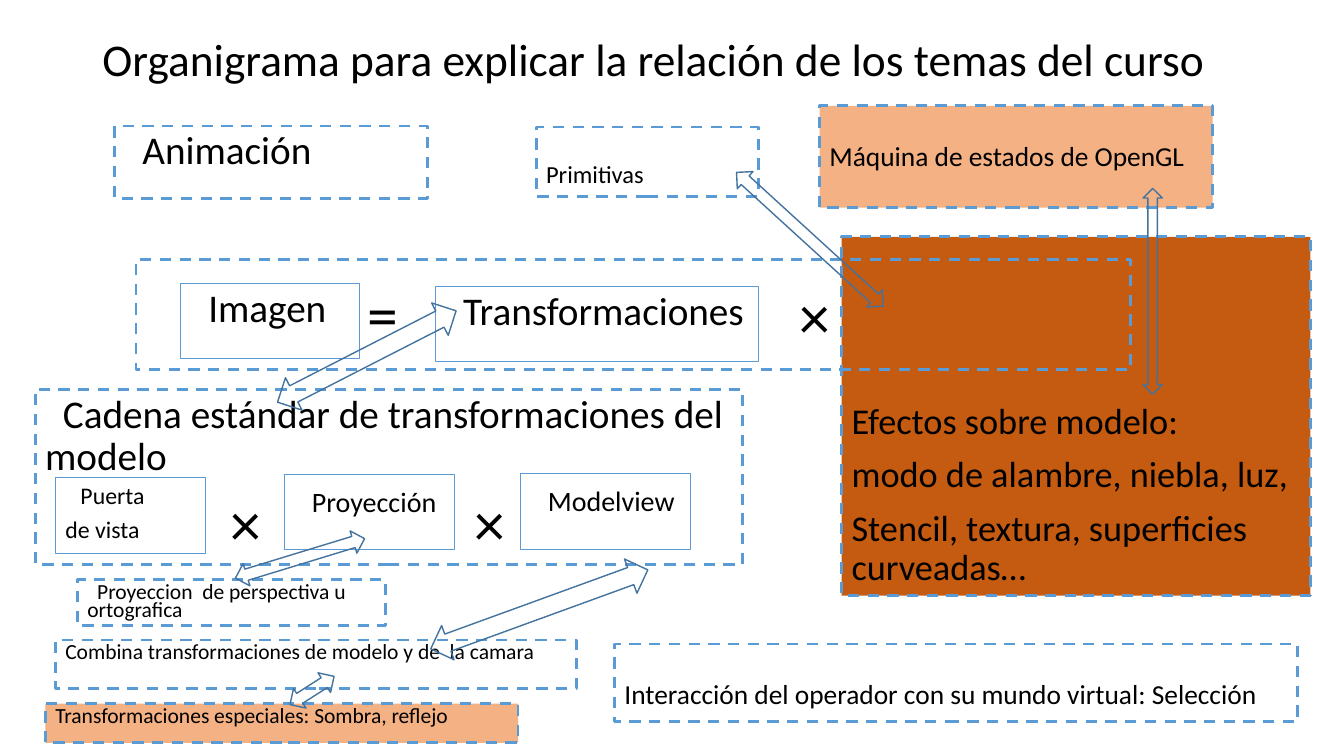
"""Build the course topic map with its boxes, operators and double arrows."""
from pptx import Presentation
from pptx.dml.color import RGBColor
from pptx.enum import dml, shapes, text
from pptx.util import Pt

COLORS = {"ink": "000000", "blue": "5B9BD5", "arrow": "43739E", "peach": "F4B183", "rust": "C55A11"}


def write(shape, lines, size, spacing=0.9, indent=0, top=3.6):
    """Fill a shape with left-aligned paragraphs."""
    frame = shape.text_frame
    frame.word_wrap = True
    frame.auto_size = text.MSO_AUTO_SIZE.NONE
    frame.vertical_anchor = text.MSO_ANCHOR.TOP
    frame.margin_top, frame.margin_bottom = Pt(top), 0
    frame.text = "\n".join(lines)
    for number, paragraph in enumerate(frame.paragraphs):
        paragraph.alignment = text.PP_ALIGN.LEFT
        paragraph.line_spacing = spacing
        paragraph.space_before = Pt(10 if number else 0)
        paragraph.font.size = Pt(size)
        paragraph.font.name = "Calibri"
        paragraph.font.color.rgb = RGBColor.from_string(COLORS["ink"])
        if indent and number == 0:
            paragraph._p.get_or_add_pPr().set("indent", str(Pt(indent)))


def draw(kind, place, line, width, fill=None):
    """Add an outlined shape, filled only when a colour is named."""
    shape = slide.shapes.add_shape(kind, *[Pt(value) for value in place])
    shape.shadow.inherit = False
    shape.line.color.rgb = RGBColor.from_string(COLORS[line])
    shape.line.width = Pt(width)
    if fill:
        shape.fill.solid()
        shape.fill.fore_color.rgb = RGBColor.from_string(COLORS[fill])
    else:
        shape.fill.background()
    return shape


presentation = Presentation()
presentation.slide_width, presentation.slide_height = Pt(960), Pt(540)
slide = presentation.slides.add_slide(presentation.slide_layouts[5])

title = slide.shapes.title
title.left, title.top, title.width, title.height = Pt(66), Pt(7.2), Pt(828), Pt(74)
write(title, ["Organigrama para explicar la relación de los temas del curso"], 32.4)
title.text_frame.vertical_anchor = text.MSO_ANCHOR.MIDDLE
title.text_frame.margin_bottom = Pt(3.6)

solid_boxes = [
    ((311, 204.5, 231, 54), ["Transformaciones"], dict(size=28, indent=12.7)),
    ((129, 202.3, 127.5, 54), ["Imagen"], dict(size=28, indent=12.7)),
    ((39.6, 341.3, 107.3, 54), ["Puerta", "de vista"], dict(size=17, spacing=0.7, indent=10.8, top=7.6)),
    ((203, 338.6, 121.7, 54), ["Proyección"], dict(size=20, indent=12.7, top=10.2)),
    ((371.5, 338.2, 121.7, 54), ["Modelview"], dict(size=20, indent=12.7, top=10.2)),
]
dashed_boxes = [
    ((82, 90, 223.2, 51.8), None, ["Animación"], dict(size=28, indent=12.7)),
    ((25.2, 278, 505.4, 125.3), None, ["Cadena estándar de transformaciones del modelo"],
     dict(size=28, indent=12.7)),
    ((601.2, 169.2, 334.8, 256.3), "rust",
     ["Efectos sobre modelo:", "modo de alambre, niebla, luz,", "Stencil, textura, superficies curveadas…"],
     dict(size=25.9, top=119)),
    ((439, 460, 488, 55.4), None, ["Interacción del operador con su mundo virtual: Selección"],
     dict(size=19.6, spacing=0.7, top=30.3)),
    ((39.6, 457.2, 372.2, 34.6), None, ["Combina transformaciones de modelo y de  la camara"],
     dict(size=15.4, spacing=0.7)),
    ((55.4, 414, 220.3, 33), None, ["Proyeccion  de perspectiva u ortografica"],
     dict(size=15.4, spacing=0.7, indent=7)),
    ((383, 90.7, 158.6, 49.7), None, ["Primitivas"], dict(size=17.5, spacing=0.7, top=28.5)),
    ((585.4, 75.6, 280.8, 72.7), "peach", ["Máquina de estados de OpenGL"],
     dict(size=19.6, spacing=0.7, top=30.3)),
    ((32.4, 502.6, 337.7, 28), "peach", ["Transformaciones especiales: Sombra, reflejo"],
     dict(size=15.4, spacing=0.7)),
    ((97.2, 185.5, 710.6, 78.5), None, [], dict(size=18)),
]
for place, lines, style in solid_boxes:
    write(draw(shapes.MSO_SHAPE.RECTANGLE, place, "blue", 0.75), lines, **style)
for place, fill, lines, style in dashed_boxes:
    box = draw(shapes.MSO_SHAPE.RECTANGLE, place, "blue", 2, fill)
    box.line.dash_style = dml.MSO_LINE.DASH
    if lines:
        write(box, lines, **style)

for symbol, left, top in [("×", 563.8, 201), ("=", 255.6, 199.4), ("×", 332, 348.5), ("×", 157.7, 348.5)]:
    operator = slide.shapes.add_textbox(Pt(left), Pt(top), Pt(38), Pt(59))
    write(operator, [symbol], 44)

arrows = [
    ((249, 183, 26, 143.3), 62.9, 0.265),
    ((372.2, 352.8, 26, 165), 70, 0.265),
    ((206, 350.6, 16.6, 96.5), 73, 0.265),
    ((570.2, 100, 16.6, 141.8), 312.4, 0.265),
    ((816.5, 134.6, 13.7, 147), 0, 0.655),
    ((214.6, 474.5, 16.6, 37.4), 57.4, 0.265),
]
for place, rotation, shaft in arrows:
    arrow = draw(shapes.MSO_SHAPE.UP_DOWN_ARROW, place, "arrow", 1)
    arrow.rotation = rotation
    arrow.adjustments[0], arrow.adjustments[1] = shaft, 0.5

presentation.save("out.pptx")
